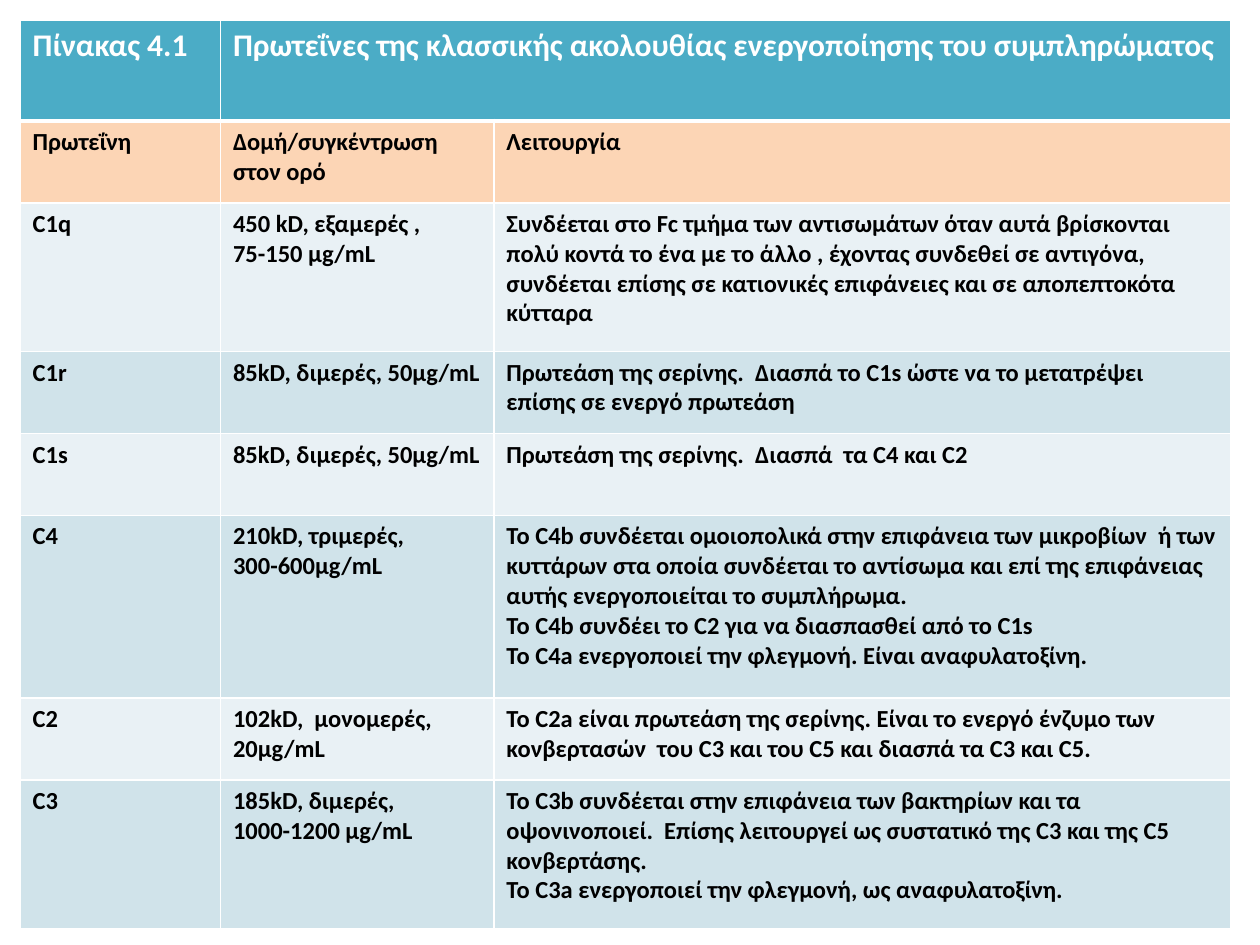
from dataclasses import dataclass

from lxml import etree
from pptx import Presentation
from pptx.dml.color import RGBColor
from pptx.enum.text import MSO_ANCHOR
from pptx.oxml.ns import qn
from pptx.util import Inches, Pt

TOP = MSO_ANCHOR.TOP


@dataclass(frozen=True)
class Theme:
    font: str = "Calibri"
    white: str = "FFFFFF"
    black: str = "000000"
    teal: str = "4BACC6"
    peach: str = "FCD5B5"
    bands: tuple = ("E9F1F5", "D0E3EA")
    title: int = 18
    body: int = 14
    thin: int = 1
    thick: int = 3


COLS = (1.59, 2.17, 5.85)
ROWS = (0.8, 0.65, 1.18, 0.65, 0.65, 1.45, 0.65, 1.18)

# A line break starts a new paragraph
CELLS = (
    ("Πίνακας 4.1",
     "Πρωτεΐνες της κλασσικής ακολουθίας ενεργοποίησης του συμπληρώματος", ""),
    ("Πρωτεΐνη", "Δομή/συγκέντρωση στον ορό", "Λειτουργία"),
    ("C1q", "450 kD, εξαμερές ,\n75-150 μg/mL",
     "Συνδέεται στο Fc τμήμα των αντισωμάτων όταν αυτά βρίσκονται πολύ κοντά "
     "το ένα με το άλλο , έχοντας συνδεθεί σε αντιγόνα, συνδέεται επίσης σε "
     "κατιονικές επιφάνειες και σε αποπεπτοκότα κύτταρα"),
    ("C1r", "85kD, διμερές, 50μg/mL",
     "Πρωτεάση της σερίνης.  Διασπά το C1s ώστε να το μετατρέψει επίσης σε "
     "ενεργό πρωτεάση"),
    ("C1s", "85kD, διμερές, 50μg/mL",
     "Πρωτεάση της σερίνης.  Διασπά  τα C4 και C2"),
    ("C4", "210kD, τριμερές,\n300-600μg/mL",
     "Το C4b συνδέεται ομοιοπολικά στην επιφάνεια των μικροβίων  ή των "
     "κυττάρων στα οποία συνδέεται το αντίσωμα και επί της επιφάνειας αυτής "
     "ενεργοποιείται το συμπλήρωμα.\n"
     "Το C4b συνδέει το C2 για να διασπασθεί από το C1s\n"
     "Το C4a ενεργοποιεί την φλεγμονή. Είναι αναφυλατοξίνη."),
    ("C2", "102kD,  μονομερές, 20μg/mL",
     "Το C2a είναι πρωτεάση της σερίνης. Είναι το ενεργό ένζυμο των "
     "κονβερτασών  του C3 και του C5 και διασπά τα C3 και C5."),
    ("C3", "185kD, διμερές,\n1000-1200 μg/mL",
     "Το C3b συνδέεται στην επιφάνεια των βακτηρίων και τα οψονινοποιεί.  "
     "Επίσης λειτουργεί ως συστατικό της C3 και της C5 κονβερτάσης.\n"
     "Το C3a ενεργοποιεί την φλεγμονή, ως αναφυλατοξίνη."),
)


class Deck:
    def __init__(self, theme):
        self.theme = theme
        self.prs = Presentation()
        self.prs.slide_width = Inches(10)
        self.prs.slide_height = Inches(7.5)
        self.slide = self.prs.slides.add_slide(self.prs.slide_layouts[6])

    def edge(self, cell, side, width):
        line = etree.SubElement(cell._tc.get_or_add_tcPr(), qn(f"a:ln{side}"),
                                w=str(Pt(width)))
        fill = etree.SubElement(line, qn("a:solidFill"))
        etree.SubElement(fill, qn("a:srgbClr"), val=self.theme.white)

    def cell(self, cell, text, fill, size, color, edges):
        # Borders come before the fill in the cell properties
        for side, width in edges.items():
            self.edge(cell, side, width)
        cell.fill.solid()
        cell.fill.fore_color.rgb = RGBColor.from_string(fill)
        cell.vertical_anchor = TOP
        cell.text_frame.text = text
        style = {"name": self.theme.font, "size": Pt(size), "bold": True}
        for par in cell.text_frame.paragraphs:
            for run in par.runs:
                for key, value in style.items():
                    setattr(run.font, key, value)
                run.font.color.rgb = RGBColor.from_string(color)

    def table(self, left, top, cols, rows, cells):
        t = self.theme
        grid = self.slide.shapes.add_table(
            len(rows), len(cols), Inches(left), Inches(top),
            Inches(sum(cols)), Inches(sum(rows))).table
        for col, width in zip(grid.columns, cols):
            col.width = Inches(width)
        for row, height in zip(grid.rows, rows):
            row.height = Inches(height)

        # Title row, heading row, then alternating bands
        for r, texts in enumerate(cells):
            head = r == 0
            fill = (t.teal, t.peach)[r] if r < 2 else t.bands[r % 2]
            size, color = (t.title, t.white) if head else (t.body, t.black)
            edges = {"L": t.thin, "R": t.thin,
                     "T": t.thick if r == 1 else t.thin,
                     "B": t.thick if head else t.thin}
            for c, text in enumerate(texts):
                self.cell(grid.cell(r, c), text, fill, size, color, edges)
        grid.cell(0, 1).merge(grid.cell(0, 2))

    def save(self):
        self.prs.save("out.pptx")


def main():
    deck = Deck(Theme())
    deck.table(0.16, 0.16, COLS, ROWS, CELLS)
    deck.save()


if __name__ == "__main__":
    main()
